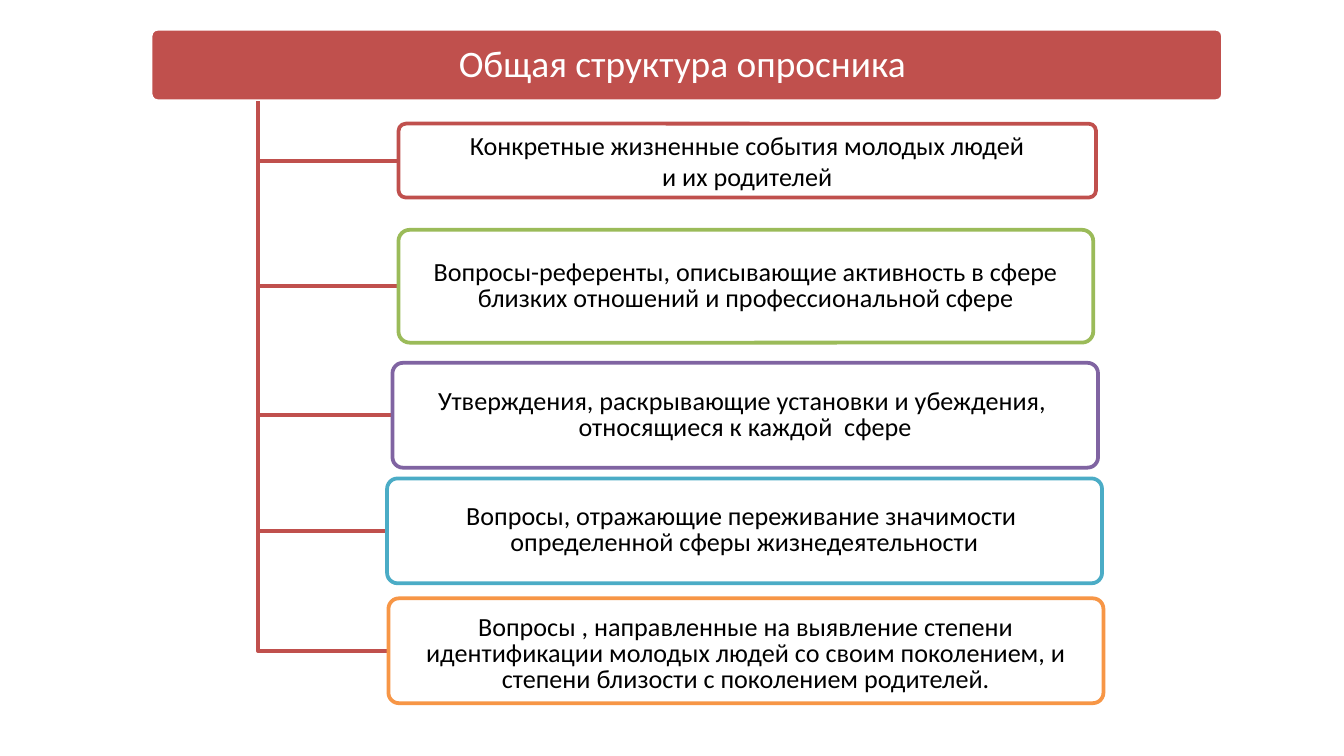
from pptx import Presentation
from pptx.dml.color import RGBColor
from pptx.enum.shapes import MSO_SHAPE
from pptx.enum.text import MSO_ANCHOR, MSO_AUTO_SIZE, PP_ALIGN
from pptx.util import Inches, Pt

RED = "C0504D"
WHITE = "FFFFFF"
BLACK = "000000"
WIDE = Inches(10)
HIGH = WIDE * 9 // 16

BANNER = (11.2, 3.8, 79.8, 9.6)
CARDS = [
    ((29.65, 16.36, 51.9, 9.78), RED, 1.0, 0.02,
     ["Конкретные жизненные события молодых людей", "и их родителей"]),
    ((29.65, 30.4, 51.7, 14.93), "9BBB59", Pt(14), 0.03,
     ["Вопросы-референты, описывающие активность в сфере "
      "близких отношений и профессиональной сфере"]),
    ((29.2, 48, 52.5, 13.87), "8064A2", Pt(14), 0.02,
     ["Утверждения, раскрывающие установки и убеждения, ",
      "относящиеся к каждой  сфере"]),
    ((28.8, 63.29, 53.2, 13.87), "4BACC6", Pt(14), 0.02,
     ["Вопросы, отражающие переживание значимости ",
      "определенной сферы жизнедеятельности"]),
    ((28.9, 79.15, 53.2, 13.87), "F79646", Pt(14), 0.08,
     ["Вопросы , направленные на выявление степени идентификации "
      "молодых людей со своим поколением, и степени близости "
      "с поколением родителей."]),
]


def tint(code):
    return RGBColor.from_string(code)


def across(share):
    return int(WIDE * share / 100)


def down(share):
    return int(HIGH * share / 100)


def place(box):
    left, top, width, height = box
    return across(left), down(top), across(width), down(height)


def write(shape, lines, size, color, gap, top=0.02):
    frame = shape.text_frame
    frame.word_wrap = True
    frame.auto_size = MSO_AUTO_SIZE.NONE
    frame.vertical_anchor = MSO_ANCHOR.MIDDLE
    frame.margin_left = frame.margin_right = Inches(0.03)
    frame.margin_top, frame.margin_bottom = Inches(top), Inches(0.02)
    frame.text = "\n".join(lines)
    for line in frame.paragraphs:
        line.alignment = PP_ALIGN.CENTER
        line.line_spacing = gap
        line.font.name = "Calibri"
        line.font.size = Pt(size)
        line.font.color.rgb = tint(color)


def panel(slide, box, fill, edge):
    shape = slide.shapes.add_shape(MSO_SHAPE.ROUNDED_RECTANGLE, *place(box))
    shape.adjustments[0] = 0.1
    shape.shadow.inherit = False
    shape.fill.solid()
    shape.fill.fore_color.rgb = tint(fill)
    shape.line.color.rgb = tint(edge)
    shape.line.width = Pt(2)
    return shape


def banner(slide, box):
    panel(slide, box, RED, WHITE)
    title = slide.shapes.title
    title.left, title.top, title.width, title.height = place(box)
    write(title, ["Общая структура опросника "], 20, WHITE, 0.9)
    title.element.getparent().append(title.element)


def branch(slide, root, box):
    left, top, width, height = root
    trunk = across(left + width / 10)
    level = down(box[1] + box[3] / 2)
    pen = slide.shapes.build_freeform(trunk, down(top + height))
    pen.add_line_segments([(trunk, level), (across(box[0]), level)], close=False)
    elbow = pen.convert_to_shape()
    elbow.shadow.inherit = False
    elbow.fill.background()
    elbow.line.color.rgb = tint(RED)
    elbow.line.width = Pt(2)


def card(slide, box, edge, gap, top, lines):
    write(panel(slide, box, WHITE, edge), lines, 14, BLACK, gap, top)


def main():
    deck = Presentation()
    deck.slide_width, deck.slide_height = WIDE, HIGH
    slide = deck.slides.add_slide(deck.slide_layouts[5])
    banner(slide, BANNER)
    for box, *rest in CARDS:
        branch(slide, BANNER, box)
        card(slide, box, *rest)
    deck.save("out.pptx")


if __name__ == "__main__":
    main()
